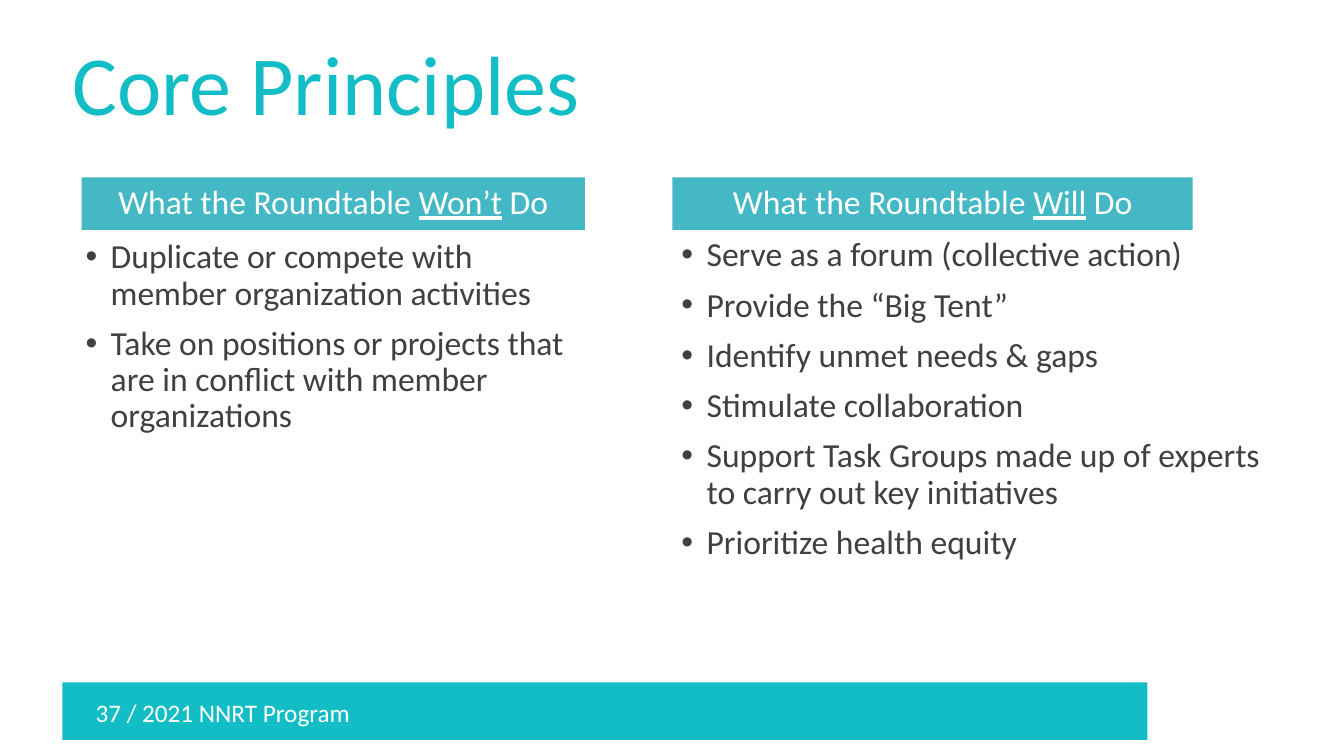
from pptx import Presentation
from pptx.dml.color import RGBColor
from pptx.enum.shapes import MSO_SHAPE
from pptx.enum.text import MSO_ANCHOR, PP_ALIGN
from pptx.oxml import parse_xml
from pptx.oxml.ns import nsdecls
from pptx.util import Inches, Pt

TEAL, HEADER_TEAL, WHITE, DARK = "13BDC6", "44B8C4", "FFFFFF", "403F41"


def style(paragraph, size, color):
    paragraph.font.name = "Calibri"
    paragraph.font.size = Pt(size)
    paragraph.font.color.rgb = RGBColor.from_string(color)


def add_bar(slide, left, top, width, height, color):
    """Add a filled rectangle without outline or shadow."""
    bar = slide.shapes.add_shape(
        MSO_SHAPE.RECTANGLE, Inches(left), Inches(top), Inches(width), Inches(height))
    bar.shadow.inherit = False
    bar.fill.solid()
    bar.fill.fore_color.rgb = RGBColor.from_string(color)
    bar.line.fill.background()
    return bar


presentation = Presentation()
presentation.slide_width = Inches(13.33)
presentation.slide_height = Inches(7.5)
slide = presentation.slides.add_slide(presentation.slide_layouts[6])

add_bar(slide, 0.62, 6.77, 10.76, 0.57, TEAL)

# Title and footer: text, left, top, width, height, size, color, line spacing
labels = [
    ("Core Principles", 0.62, 0.15, 6.05, 1.45, 60, TEAL, 0.9),
    ("37 / 2021 NNRT Program", 0.85, 6.87, 3.2, 0.4, 18, WHITE, 1.0),
]
for text, left, top, width, height, size, color, spacing in labels:
    label = slide.shapes.add_textbox(
        Inches(left), Inches(top), Inches(width), Inches(height))
    frame = label.text_frame
    frame.word_wrap = True
    frame.vertical_anchor = MSO_ANCHOR.MIDDLE
    paragraph = frame.paragraphs[0]
    paragraph.text = text
    paragraph.line_spacing = spacing
    style(paragraph, size, color)

# Columns: underlined word, header left and width, list position and size, items
columns = [
    ("Won’t", 0.81, 4.99, (0.75, 2.33, 5.1, 2.06), [
        "Duplicate or compete with member organization activities",
        "Take on positions or projects that are in conflict with member organizations",
    ]),
    ("Will", 6.67, 5.16, (6.66, 2.31, 6.1, 3.35), [
        "Serve as a forum (collective action)",
        "Provide the “Big Tent”",
        "Identify unmet needs & gaps",
        "Stimulate collaboration",
        "Support Task Groups made up of experts to carry out key initiatives",
        "Prioritize health equity",
    ]),
]
for word, header_left, header_width, list_box, items in columns:
    header = add_bar(slide, header_left, 1.76, header_width, 0.52, HEADER_TEAL)
    frame = header.text_frame
    frame.word_wrap = True
    frame.vertical_anchor = MSO_ANCHOR.MIDDLE
    frame.margin_left = frame.margin_right = Inches(0.13)
    frame.margin_top = frame.margin_bottom = Inches(0.13)
    paragraph = frame.paragraphs[0]
    paragraph.alignment = PP_ALIGN.CENTER
    paragraph.line_spacing = 0.9
    for text in ("What the Roundtable ", word, " Do"):
        run = paragraph.add_run()
        run.text = text
        if text == word:
            run.font.underline = True
    style(paragraph, 24, WHITE)

    bullet_list = slide.shapes.add_textbox(*map(Inches, list_box))
    frame = bullet_list.text_frame
    frame.word_wrap = True
    for index, item in enumerate(items):
        paragraph = frame.add_paragraph() if index else frame.paragraphs[0]
        paragraph.text = item
        paragraph.line_spacing = 0.9
        paragraph.space_before = Pt(10 if index else 0)
        properties = paragraph._p.get_or_add_pPr()
        properties.set("marL", str(Inches(0.25)))
        properties.set("indent", str(Inches(-0.25)))
        properties.append(parse_xml(f'<a:buFont {nsdecls("a")} typeface="Arial"/>'))
        properties.append(parse_xml(f'<a:buChar {nsdecls("a")} char="•"/>'))
        style(paragraph, 24, DARK)

presentation.save("out.pptx")
